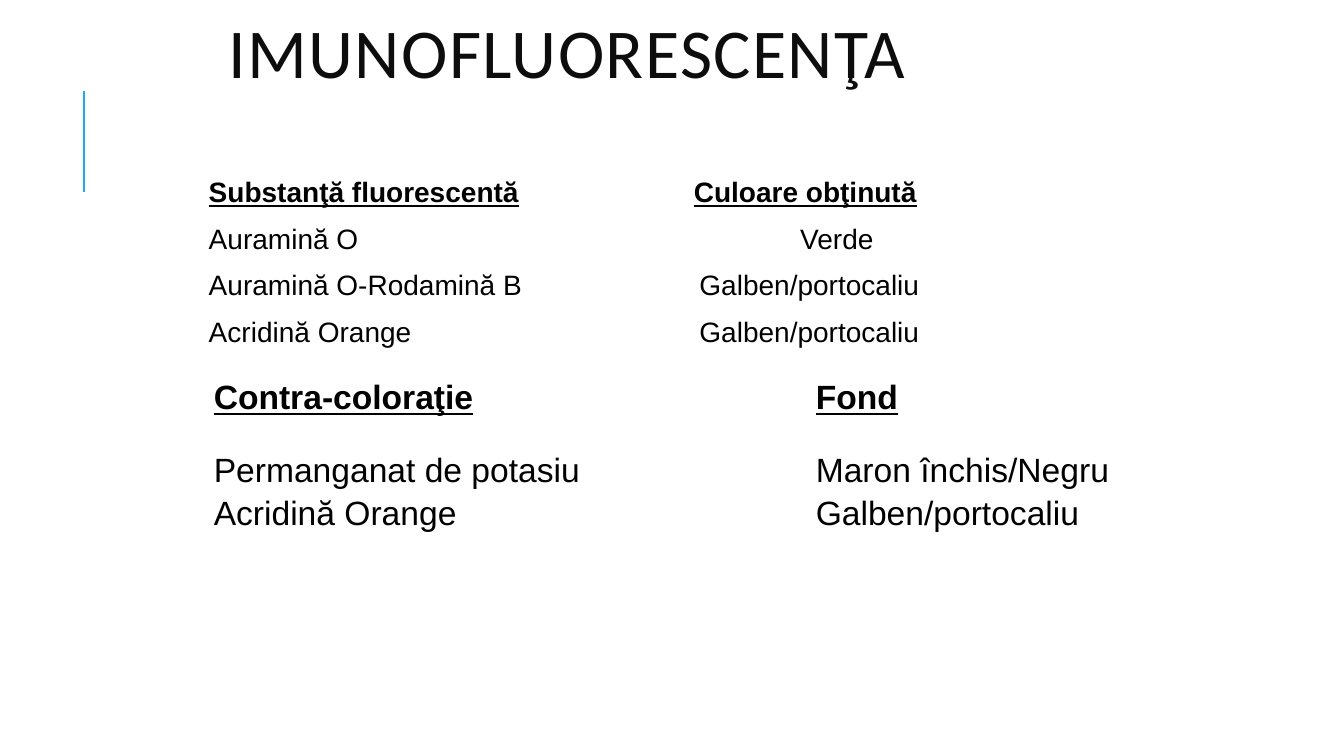
import pptx
import pptx.util
import pptx.dml.color
import pptx.enum.shapes
import pptx.enum.text
import lxml.etree

Pt = pptx.util.Pt
ANCHOR = pptx.enum.text.MSO_ANCHOR
COLORS = {"title": "0D0D0D", "body": "000000", "accent": "1CADE4"}
STAINS = [
    ("Substanţă fluorescentă", "Culoare obţinută", 346.5),
    ("Auramină O", "Verde", 422.5),
    ("Auramină O-Rodamină B", "Galben/portocaliu", 350.5),
    ("Acridină Orange", "Galben/portocaliu", 350.5),
]
COUNTERSTAINS = [
    (["Contra-coloraţie"], ["Fond"]),
    (["Permanganat de potasiu", "Acridină Orange"],
     ["Maron închis/Negru", "Galben/portocaliu"]),
]


def rgb(name):
    return pptx.dml.color.RGBColor.from_string(COLORS[name])


def write(paragraph, text, size, font="Arial", color="body", heading=False, spacing=0):
    run = paragraph.add_run()
    run.text = text
    run.font.size = Pt(size)
    run.font.name = font
    run.font.color.rgb = rgb(color)
    run.font.bold = heading
    run.font.underline = heading
    if spacing:
        run.font._element.set("spc", str(spacing * 100))


def add_frame(slide, left, top, width, height, anchor, inset_x):
    frame = slide.shapes.add_textbox(Pt(left), Pt(top), Pt(width), Pt(height)).text_frame
    frame.word_wrap = True
    frame.vertical_anchor = anchor
    frame.margin_left = frame.margin_right = Pt(inset_x)
    frame.margin_top = frame.margin_bottom = Pt(3.6)
    return frame


def paragraph_at(frame, index):
    return frame.add_paragraph() if index else frame.paragraphs[0]


def add_tab_stop(paragraph, position):
    properties = paragraph._p.get_or_add_pPr()
    tabs = lxml.etree.SubElement(properties, pptx.oxml.ns.qn("a:tabLst"))
    lxml.etree.SubElement(tabs, pptx.oxml.ns.qn("a:tab"), pos=str(Pt(position)), algn="l")


def add_accent_line(slide):
    accent = slide.shapes.add_connector(
        pptx.enum.shapes.MSO_CONNECTOR.STRAIGHT, Pt(60), Pt(136.8), Pt(60), Pt(64.8))
    accent.line.color.rgb = rgb("accent")
    accent.line.width = Pt(1.5)
    lxml.etree.SubElement(accent._element.spPr, pptx.oxml.ns.qn("a:effectLst"))


def add_title(slide):
    title = add_frame(slide, 156, 0, 648, 84, ANCHOR.MIDDLE, 7.2).paragraphs[0]
    title.line_spacing = 0.8
    write(title, "IMUNOFLUORESCENŢA", 50, font="Calibri", color="title", spacing=1)


def add_stains(slide):
    frame = add_frame(slide, 145.5, 126, 680, 160.5, ANCHOR.TOP, 3.6)
    for index, (stain, result, position) in enumerate(STAINS):
        paragraph = paragraph_at(frame, index)
        paragraph.line_spacing = 0.8
        paragraph.space_before = Pt(12)
        paragraph.space_after = Pt(2)
        add_tab_stop(paragraph, position)
        heading = index == 0
        write(paragraph, stain, 20, heading=heading)
        write(paragraph, "\t", 20)
        write(paragraph, result, 20, heading=heading)


def fill_cell(cell, lines, heading):
    cell.fill.background()
    cell.vertical_anchor = ANCHOR.MIDDLE if heading else ANCHOR.TOP
    cell.margin_left = cell.margin_right = Pt(7.2)
    cell.margin_top = Pt(3.6 if heading else 7.2)
    cell.margin_bottom = Pt(3.6)
    for index, line in enumerate(lines):
        paragraph = paragraph_at(cell.text_frame, index)
        paragraph.space_before = Pt(4)
        write(paragraph, line, 24, heading=heading)


def add_counterstains(slide):
    table = slide.shapes.add_table(2, 2, Pt(145.5), Pt(253.5), Pt(746), Pt(167)).table
    table.first_row = table.horz_banding = False
    for column, width in zip(table.columns, (430, 316)):
        column.width = Pt(width)
    for row, height in zip(table.rows, (62, 105)):
        row.height = Pt(height)
    for row_index, entries in enumerate(COUNTERSTAINS):
        for column_index, lines in enumerate(entries):
            fill_cell(table.cell(row_index, column_index), lines, row_index == 0)


def main():
    deck = pptx.Presentation()
    deck.slide_width, deck.slide_height = Pt(960), Pt(540)
    slide = deck.slides.add_slide(deck.slide_layouts[6])
    add_accent_line(slide)
    add_title(slide)
    add_stains(slide)
    add_counterstains(slide)
    deck.save("out.pptx")


if __name__ == "__main__":
    main()
